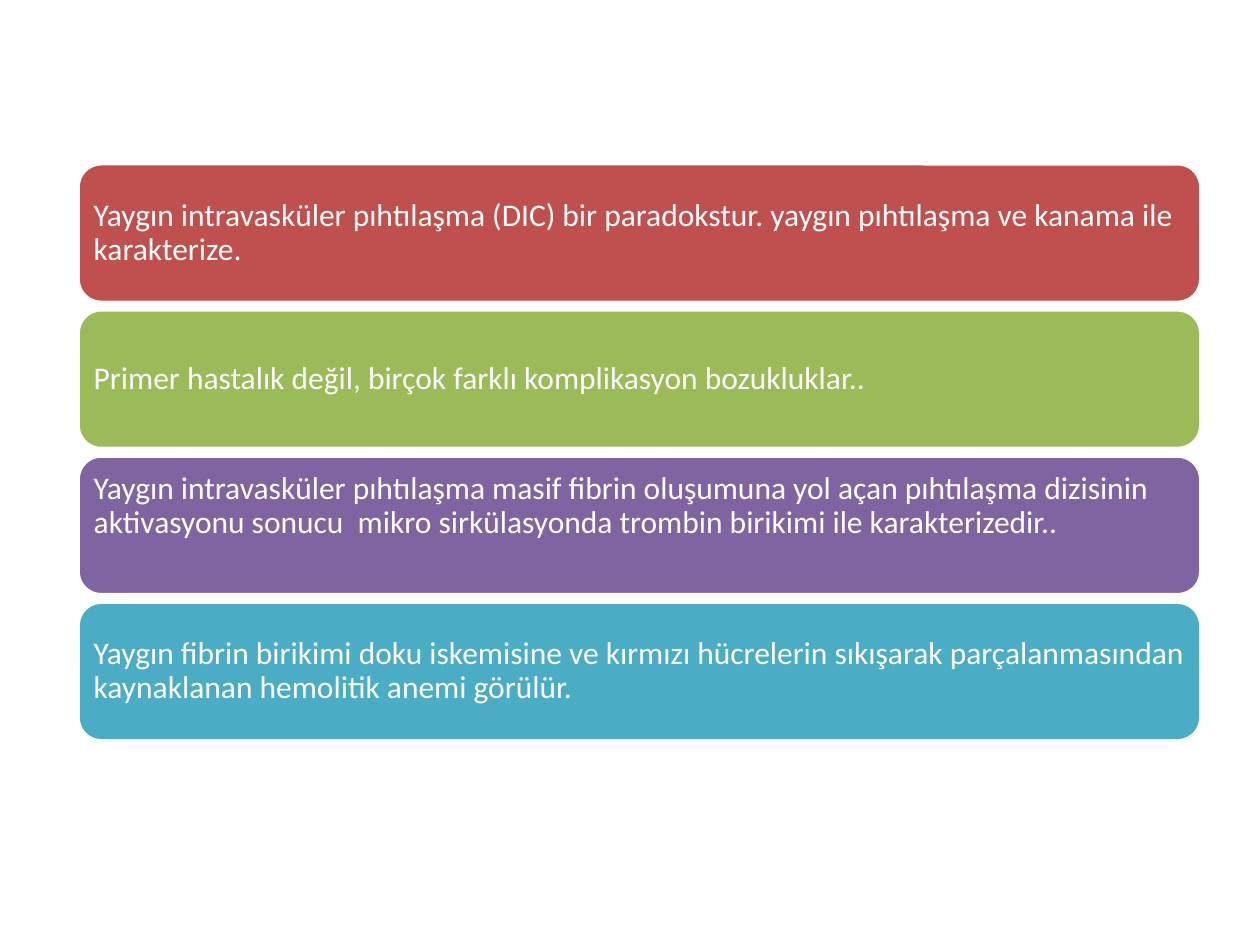
from pptx import Presentation
from pptx.dml.color import RGBColor
from pptx.enum.shapes import MSO_SHAPE as SHAPE
from pptx.enum.text import MSO_ANCHOR as ANCHOR, PP_ALIGN as ALIGN
from pptx.util import Inches, Pt

LEFT, TOP, WIDTH, HEIGHT, PITCH = 0.62, 1.3, 8.91, 1.1, 1.16
INSET = 0.07

PANELS = [
    ("C0504D", "Yaygın intravasküler pıhtılaşma (DIC) bir paradokstur. "
               "yaygın pıhtılaşma ve kanama ile karakterize.", INSET),
    ("9BBB59", "Primer hastalık değil, birçok farklı komplikasyon bozukluklar..", INSET),
    ("8064A2", "Yaygın intravasküler pıhtılaşma masif fibrin oluşumuna yol açan "
               "pıhtılaşma dizisinin aktivasyonu sonucu  mikro sirkülasyonda "
               "trombin birikimi ile karakterizedir..", 0.37),
    ("4BACC6", "Yaygın fibrin birikimi doku iskemisine ve kırmızı hücrelerin sıkışarak "
               "parçalanmasından kaynaklanan hemolitik anemi görülür.", INSET),
]


def color(value):
    return RGBColor.from_string(value)


def apply(target, values):
    for name, value in values.items():
        setattr(target, name, value)


class Deck:
    frame = {"word_wrap": True, "vertical_anchor": ANCHOR.MIDDLE,
             "margin_left": Inches(INSET), "margin_right": Inches(INSET),
             "margin_top": Inches(INSET)}
    paragraph = {"alignment": ALIGN.LEFT, "line_spacing": 0.9, "space_after": Pt(6.3)}
    font = {"name": "Calibri", "size": Pt(18)}
    white = "FFFFFF"

    def __init__(self, prs):
        self.slide = prs.slides.add_slide(prs.slide_layouts[6])

    def panel(self, top, fill, text, bottom_inset):
        sp = self.slide.shapes.add_shape(
            SHAPE.ROUNDED_RECTANGLE,
            Inches(LEFT), Inches(top), Inches(WIDTH), Inches(HEIGHT))
        sp.shadow.inherit = False
        sp.fill.solid()
        sp.fill.fore_color.rgb = color(fill)
        sp.line.color.rgb = color(self.white)
        sp.line.width = Pt(2)
        tf = sp.text_frame
        apply(tf, {**self.frame, "margin_bottom": Inches(bottom_inset)})
        p = tf.paragraphs[0]
        apply(p, self.paragraph)
        r = p.add_run()
        r.text = text
        apply(r.font, self.font)
        r.font.color.rgb = color(self.white)


def main():
    prs = Presentation()
    prs.slide_width, prs.slide_height = Inches(10), Inches(7.5)
    deck = Deck(prs)
    for i, (fill, text, bottom_inset) in enumerate(PANELS):
        deck.panel(TOP + i * PITCH, fill, text, bottom_inset)
    prs.save("out.pptx")


if __name__ == "__main__":
    main()
